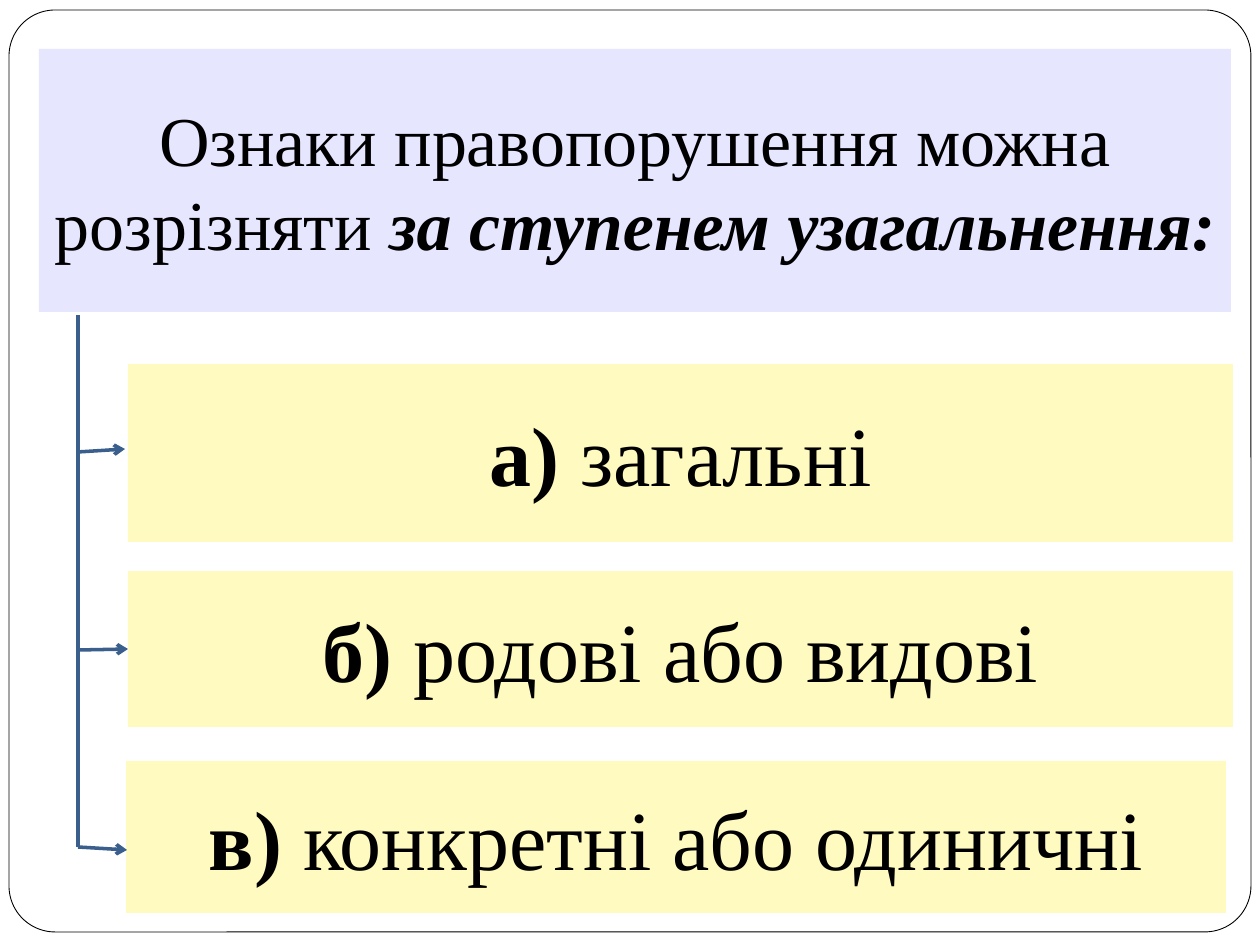
from lxml import etree
from pptx import Presentation
from pptx.dml.color import RGBColor
from pptx.enum.shapes import MSO_CONNECTOR, MSO_SHAPE
from pptx.enum.text import MSO_ANCHOR, PP_ALIGN
from pptx.oxml.ns import qn
from pptx.util import Emu, Inches, Pt

RECT, ROUND = MSO_SHAPE.RECTANGLE, MSO_SHAPE.ROUNDED_RECTANGLE
LINE = MSO_CONNECTOR.STRAIGHT
MIDDLE, CENTER = MSO_ANCHOR.MIDDLE, PP_ALIGN.CENTER
FONT = "Times New Roman"
BLACK, WHITE, LILAC, CREAM, BLUE = "000000", "FFFFFF", "E7E6FF", "FFFAC0", "3A5F8C"
LEFT = 1  # connection site on the left side
TRUNK = 78  # x of the vertical line

# Each option: label, text, box, arrow start y, arrow end
OPTIONS = [
    ("а)", " загальні", (128, 364, 1105, 178), 452, (125, 449)),
    ("б)", " родові або видові", (128, 571, 1105, 156), 650, (128, 649)),
    ("в)", " конкретні або одиничні", (126, 761, 1100, 152), 847, (127, 850)),
]


def px(n):
    return Emu(round(n * 914400 / 126))


def color(code):
    return RGBColor.from_string(code)


def add_box(slide, box, fill, kind=RECT, line=None):
    shape = slide.shapes.add_shape(kind, *map(px, box))
    shape.shadow.inherit = False
    shape.fill.solid()
    shape.fill.fore_color.rgb = color(fill)
    if line:
        shape.line.color.rgb = color(line)
        shape.line.width = Pt(0.5)
    else:
        shape.line.fill.background()
    return shape


def add_text(shape, plain, strong, size, first=False, italic=False, hang=0, before=0):
    """Write a plain and a bold run; first puts the bold run in front."""
    frame = shape.text_frame
    frame.word_wrap = True
    frame.vertical_anchor = MIDDLE
    para = frame.paragraphs[0]
    para.alignment = CENTER
    para.space_before = Pt(before)
    if hang:
        props = para._p.get_or_add_pPr()
        props.set("marL", str(Inches(hang)))
        props.set("indent", str(-Inches(hang)))
    runs = [(plain, False), (strong, True)]
    for text, bold in reversed(runs) if first else runs:
        run = para.add_run()
        run.text = text
        run.font.name = FONT
        run.font.size = Pt(size)
        run.font.bold = bold
        run.font.italic = bold and italic
        run.font.color.rgb = color(BLACK)


def add_line(slide, start, end, arrow=False):
    line = slide.shapes.add_connector(LINE, *map(px, start + end))
    line.line.color.rgb = color(BLUE)
    line.line.width = Pt(2)
    if arrow:
        etree.SubElement(line.line._get_or_add_ln(), qn("a:tailEnd"), type="arrow")
    etree.SubElement(line._element.spPr, qn("a:effectLst"))
    return line


def main():
    deck = Presentation()
    deck.slide_width, deck.slide_height = px(1260), px(945)
    slide = deck.slides.add_slide(deck.slide_layouts[6])

    # Frame
    frame = add_box(slide, (9, 10, 1242, 922), WHITE, ROUND, BLACK)
    frame.adjustments[0] = 0.05

    # Heading
    head = add_box(slide, (39, 49, 1192, 263), LILAC)
    add_text(head, "Ознаки правопорушення можна розрізняти ",
             "за ступенем узагальнення:", 40, italic=True)

    # Trunk, then the options with their arrows
    add_line(slide, (TRUNK, 315), (TRUNK, 847))
    for label, text, box, y, tip in OPTIONS:
        shape = add_box(slide, box, CREAM)
        add_text(shape, text, label, 48, first=True, hang=0.3, before=5.8)
        arrow = add_line(slide, (TRUNK, y), tip, arrow=True)
        if tip == (box[0], box[1] + box[3] // 2):
            arrow.end_connect(shape, LEFT)

    deck.save("out.pptx")


if __name__ == "__main__":
    main()
